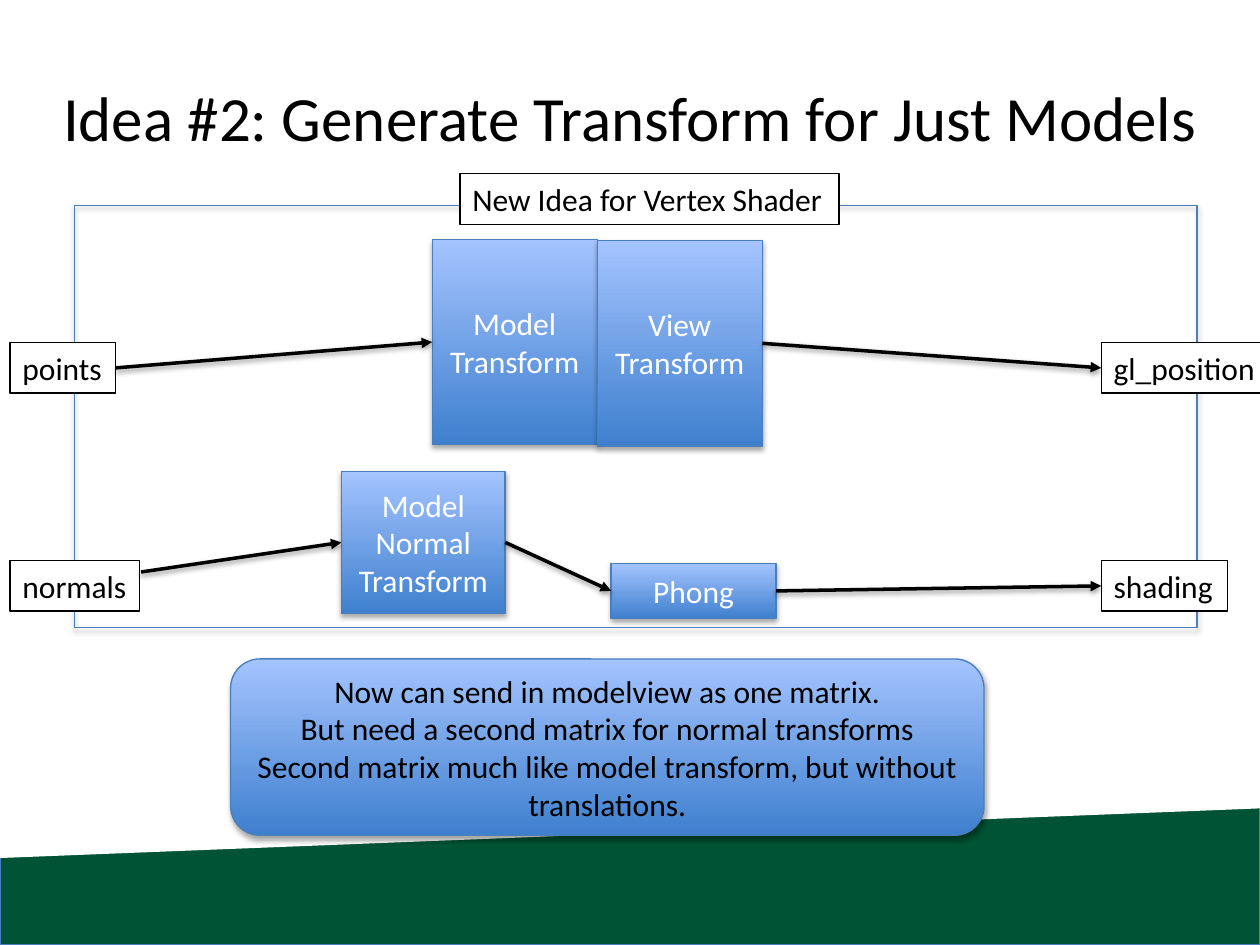
from lxml.etree import SubElement
from pptx import Presentation
from pptx.dml.color import RGBColor
from pptx.enum.shapes import MSO_CONNECTOR, MSO_SHAPE
from pptx.enum.text import MSO_ANCHOR, MSO_AUTO_SIZE, PP_ALIGN
from pptx.oxml.ns import qn
from pptx.util import Inches, Pt

HUES = {
    "green": "005334",
    "edge": "4B7EBC",
    "deep": "3F80CE",
    "pale": "A4C4FF",
    "black": "000000",
    "white": "FFFFFF",
}
FONT = {"name": "Calibri", "size": Pt(18)}
LABEL = {"word_wrap": False, "auto_size": MSO_AUTO_SIZE.SHAPE_TO_FIT_TEXT}
BLOCK = {"word_wrap": True, "vertical_anchor": MSO_ANCHOR.MIDDLE}
TOP, LEFT, BOTTOM, RIGHT = range(4)


def hue(name):
    return RGBColor.from_string(HUES[name])


def apply(item, form):
    for key, value in form.items():
        setattr(item, key, value)


def paint(shape, fill, edge):
    """Fill with a plain colour, the blue fade or nothing, then outline."""
    if fill == "fade":
        shape.fill.gradient()
        shape.fill.gradient_angle = 90
        for stop, name in zip(shape.fill.gradient_stops, ("deep", "pale")):
            stop.color.rgb = hue(name)
    elif fill:
        shape.fill.solid()
        shape.fill.fore_color.rgb = hue(fill)
    else:
        shape.fill.background()
    if edge:
        shape.line.color.rgb = hue(edge)
        shape.line.width = Pt(0.75)
    else:
        shape.line.fill.background()


def shade(shape, drop, alpha):
    """Cast a soft black shadow straight down."""
    props = shape._element.spPr
    glow = props.find(qn("a:effectLst"))
    if glow is None:
        glow = SubElement(props, qn("a:effectLst"))
    cast = SubElement(glow, qn("a:outerShdw"), blurRad=str(Pt(3.1)),
                      dist=str(Pt(drop)), dir="5400000", rotWithShape="0")
    tint = SubElement(cast, qn("a:srgbClr"), val=HUES["black"])
    SubElement(tint, qn("a:alpha"), val=str(alpha * 1000))


def write(shape, lines, form, tone="black", align=PP_ALIGN.CENTER, size=18):
    frame = shape.text_frame
    apply(frame, form)
    frame.text = "\n".join(lines)
    for para in frame.paragraphs:
        para.alignment = align
        apply(para.font, {**FONT, "size": Pt(size)})
        para.font.color.rgb = hue(tone)


def add_form(slide, kind, box, fill, edge="edge", cast=True):
    shape = slide.shapes.add_shape(kind, *map(Inches, box))
    shape.shadow.inherit = False
    paint(shape, fill, edge)
    if cast:
        shade(shape, 1.8, 35)
    return shape


def add_block(slide, box, *lines, tone="white", kind=MSO_SHAPE.RECTANGLE):
    shape = add_form(slide, kind, box, "fade")
    write(shape, lines, BLOCK, tone)
    return shape


def add_label(slide, left, top, width, text):
    box = slide.shapes.add_textbox(*map(Inches, (left, top, width, 0.4)))
    paint(box, "white", "black")
    write(box, [text], LABEL, align=PP_ALIGN.LEFT)
    return box


def add_arrow(slide, start, end):
    """Link the right side of start, a shape or a point, to the left of end."""
    fixed = isinstance(start, tuple)
    x, y = map(Inches, start) if fixed else (0, 0)
    line = slide.shapes.add_connector(MSO_CONNECTOR.STRAIGHT, x, y, x, y)
    if not fixed:
        line.begin_connect(start, RIGHT)
    line.end_connect(end, LEFT)
    line.line.color.rgb = hue("black")
    line.line.width = Pt(2)
    SubElement(line.line._get_or_add_ln(), qn("a:tailEnd"), type="triangle")
    shade(line, 1.6, 38)


def add_base(slide):
    """Green foot with a white slanted sheet laid over its upper edge."""
    add_form(slide, MSO_SHAPE.RECTANGLE, (0, 5.61, 10, 1.89), "green")
    sheet = add_form(slide, MSO_SHAPE.PARALLELOGRAM, (3.84, 0.65, 2.32, 10),
                     "white", None, False)
    sheet.adjustments[0] = 0.17
    sheet.rotation = 90
    sheet._element.spPr.xfrm.set("flipH", "1")


def add_title(slide, text):
    box = slide.shapes.add_textbox(*map(Inches, (0, 0.3, 10, 1.25)))
    write(box, [text], BLOCK, size=36)


def main():
    deck = Presentation()
    deck.slide_width, deck.slide_height = Inches(10), Inches(7.5)
    slide = deck.slides.add_slide(deck.slide_layouts[6])

    add_base(slide)
    add_title(slide, "Idea #2: Generate Transform for Just Models")

    model = add_block(slide, (3.43, 1.9, 1.31, 1.63), "Model", "Transform")
    view = add_block(slide, (4.74, 1.91, 1.31, 1.63), "View", "Transform")
    phong = add_block(slide, (4.85, 4.47, 1.31, 0.44), "Phong")
    add_form(slide, MSO_SHAPE.RECTANGLE, (0.59, 1.63, 8.91, 3.35), None)
    normal = add_block(slide, (2.71, 3.74, 1.3, 1.13),
                       "Model Normal", "Transform")

    points = add_label(slide, 0.08, 2.72, 0.84, "points")
    add_label(slide, 0.08, 4.45, 1.03, "normals")
    add_label(slide, 3.65, 1.38, 3.01, "New Idea for Vertex Shader")
    shading = add_label(slide, 8.74, 4.45, 1, "shading")
    place = add_label(slide, 8.74, 2.72, 1.34, "gl_position")

    for start, end in (
        (points, model),
        (view, place),
        ((1.12, 4.54), normal),
        (normal, phong),
        (phong, shading),
    ):
        add_arrow(slide, start, end)

    add_block(
        slide, (1.83, 5.23, 5.98, 1.4),
        "Now can send in modelview as one matrix.",
        "But need a second matrix for normal transforms",
        "Second matrix much like model transform, but without translations.",
        tone="black", kind=MSO_SHAPE.ROUNDED_RECTANGLE,
    )
    deck.save("out.pptx")


if __name__ == "__main__":
    main()
